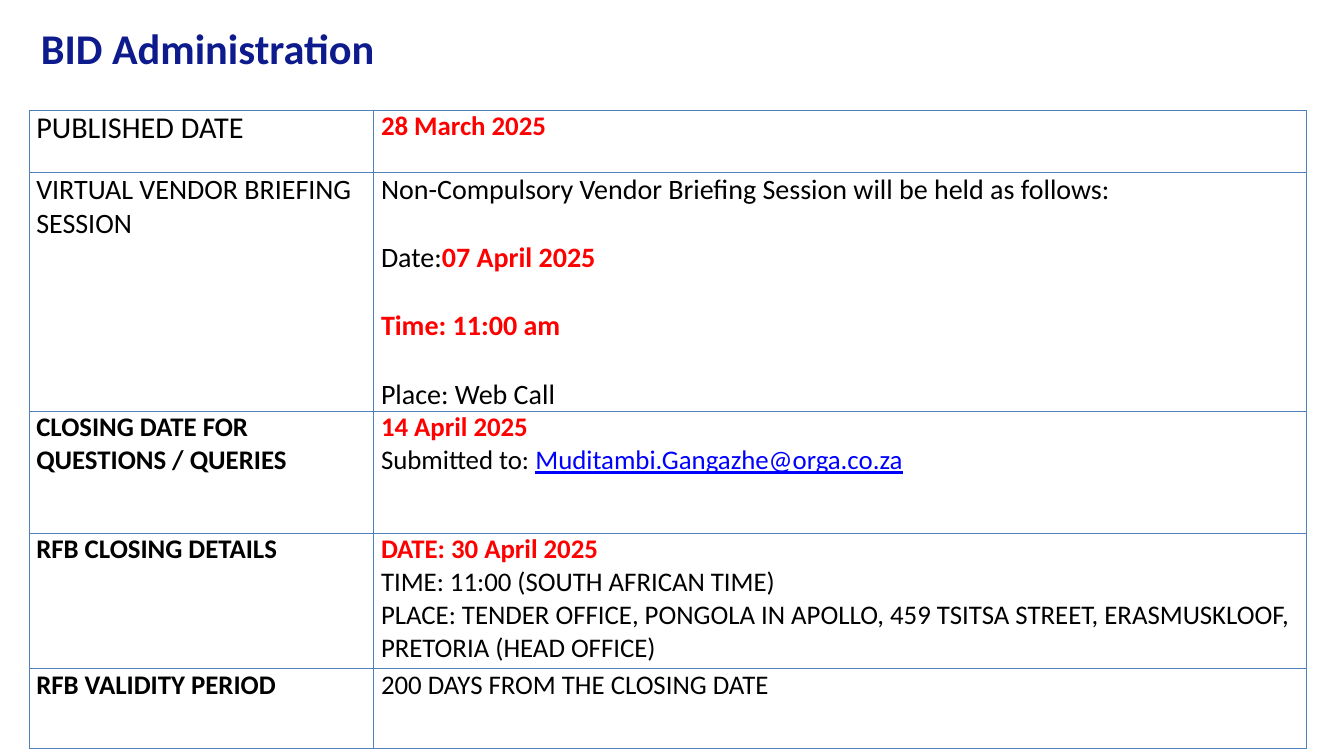
from dataclasses import dataclass

from lxml.etree import SubElement
from pptx import Presentation
from pptx.dml.color import RGBColor as RGB
from pptx.enum.text import MSO_ANCHOR as Anchor
from pptx.oxml.ns import qn
from pptx.util import Inches, Pt

SLIDE_W, SLIDE_H = Inches(11.11), Inches(6.25)


@dataclass(frozen=True)
class Theme:
    font: str = "Calibri"
    title: str = "0E1B8D"
    ink: str = "000000"
    alert: str = "FF0000"
    mail: str = "0000FF"
    paper: str = "FFFFFF"
    border: str = "4F81BD"
    title_size: float = 25.2
    large: float = 18
    medium: float = 16.7
    body: float = 16
    border_width: float = 0.75
    briefing_gap: float = 20.3


THEME = Theme()
COLUMNS = [25.65, 69.4]
PLAIN = (THEME.ink, False, False)
STRONG = (THEME.ink, True, False)
ALERT = (THEME.alert, True, False)
MAIL = (THEME.mail, False, True)

BID_ROWS = [
    (8.32, THEME.large, THEME.body, 0,
     ("PUBLISHED DATE", PLAIN),
     [[("28 March 2025", ALERT)]]),
    (31.52, THEME.medium, THEME.medium, THEME.briefing_gap,
     ("VIRTUAL VENDOR BRIEFING SESSION", PLAIN),
     [[("Non-Compulsory Vendor Briefing Session will be held as follows:", PLAIN)],
      [("Date:", PLAIN), ("07 April 2025", ALERT)],
      [("Time: 11:00 am", ALERT)],
      [("Place: Web Call", PLAIN)]]),
    (16.16, THEME.body, THEME.body, 0,
     ("CLOSING DATE FOR QUESTIONS / QUERIES", STRONG),
     [[("14 April 2025", ALERT)],
      [("Submitted to: ", PLAIN), ("Muditambi.Gangazhe@orga.co.za", MAIL)]]),
    (17.92, THEME.body, THEME.body, 0,
     ("RFB CLOSING DETAILS", STRONG),
     [[("DATE: 30 April 2025", ALERT)],
      [("TIME: 11:00 (SOUTH AFRICAN TIME)", PLAIN)],
      [("PLACE: TENDER OFFICE, PONGOLA IN APOLLO, 459 TSITSA STREET, "
        "ERASMUSKLOOF, PRETORIA (HEAD OFFICE)", PLAIN)]]),
    (10.56, THEME.body, THEME.body, 0,
     ("RFB VALIDITY PERIOD", STRONG),
     [[("200 DAYS FROM THE CLOSING DATE", PLAIN)]]),
]


def across(columns):
    return int(SLIDE_W * columns / 100)


def down(rows):
    return int(SLIDE_H * rows / 100)


def write(tf, lines, size, gap=0):
    tf.word_wrap = True
    for i, line in enumerate(lines):
        p = tf.add_paragraph() if i else tf.paragraphs[0]
        p.space_before = Pt(gap if i else 0)
        for text, (color, bold, underline) in line:
            r = p.add_run()
            r.text = text
            r.font.name = THEME.font
            r.font.size = Pt(size)
            r.font.color.rgb = RGB.from_string(color)
            r.font.bold = bold
            r.font.underline = underline


def add_title(s, text):
    sp = s.shapes.add_textbox(across(2.16), down(2.08), across(95.68), down(8.32))
    write(sp.text_frame, [[(text, (THEME.title, True, False))]], THEME.title_size)


def add_borders(cell):
    props = cell._tc.get_or_add_tcPr()
    for i, side in enumerate(("lnL", "lnR", "lnT", "lnB")):
        line = props.makeelement(qn(f"a:{side}"), {"w": str(Pt(THEME.border_width))})
        fill = SubElement(line, qn("a:solidFill"))
        SubElement(fill, qn("a:srgbClr"), val=THEME.border)
        props.insert(i, line)


def fill_cell(cell, lines, size, gap=0):
    cell.margin_left = cell.margin_right = Inches(0.06)
    cell.margin_top = cell.margin_bottom = 0
    cell.vertical_anchor = Anchor.TOP
    cell.fill.solid()
    cell.fill.fore_color.rgb = RGB.from_string(THEME.paper)
    add_borders(cell)
    write(cell.text_frame, lines, size, gap)


def add_bid_table(s):
    height = sum(row[0] for row in BID_ROWS)
    table = s.shapes.add_table(
        len(BID_ROWS), len(COLUMNS), across(2.16), down(14.56),
        across(sum(COLUMNS)), down(height)).table
    table.first_row = table.horz_banding = False
    for column, width in zip(table.columns, COLUMNS):
        column.width = across(width)
    for row, (height, label_size, size, gap, label, details) in zip(table.rows, BID_ROWS):
        row.height = down(height)
        fill_cell(row.cells[0], [[label]], label_size)
        fill_cell(row.cells[1], details, size, gap)


def main():
    prs = Presentation()
    prs.slide_width, prs.slide_height = SLIDE_W, SLIDE_H
    s = prs.slides.add_slide(prs.slide_layouts[6])
    add_title(s, "BID Administration")
    add_bid_table(s)
    prs.save("out.pptx")


if __name__ == "__main__":
    main()
